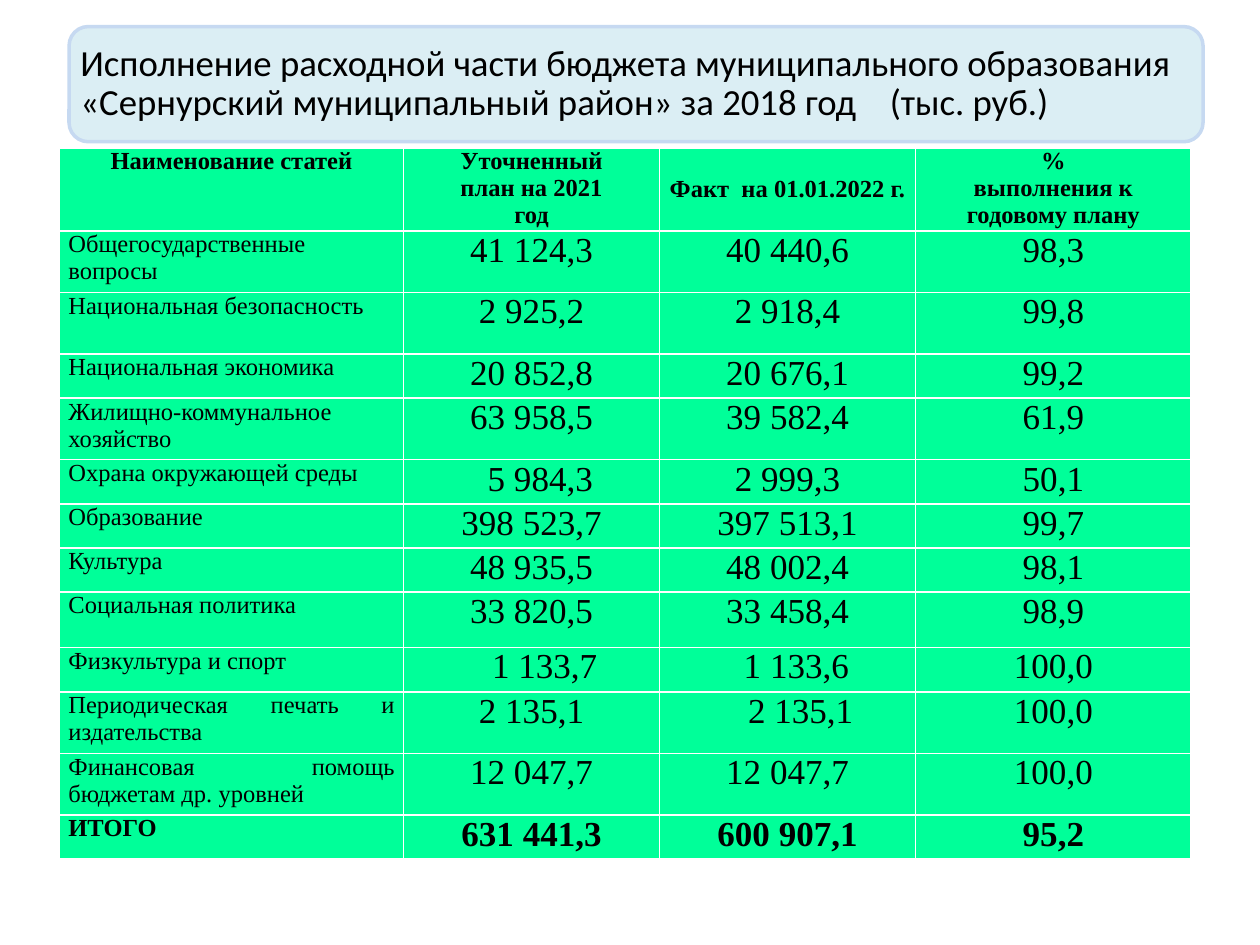
from lxml.etree import SubElement
from pptx import Presentation
from pptx.dml.color import RGBColor
from pptx.enum.shapes import MSO_SHAPE as Preset
from pptx.enum.text import MSO_ANCHOR as Anchor, PP_ALIGN as Align
from pptx.oxml.ns import qn
from pptx.util import Pt


def color(value):
    return RGBColor.from_string(value)


def add_run(paragraph, text, font, size, bold=False):
    run = paragraph.add_run()
    run.text = text
    run.font.name = font
    run.font.size = Pt(size)
    run.font.bold = bold
    run.font.color.rgb = color("000000")


presentation = Presentation()
presentation.slide_width = Pt(720)
presentation.slide_height = Pt(540)
slide = presentation.slides.add_slide(presentation.slide_layouts[6])

title = slide.shapes.add_shape(Preset.ROUNDED_RECTANGLE, Pt(39.5), Pt(15.2), Pt(648), Pt(65.8))
title.shadow.inherit = False
title.fill.solid()
title.fill.fore_color.rgb = color("DBEEF4")
title.line.color.rgb = color("C6D9F1")
title.line.width = Pt(2)
title_frame = title.text_frame
title_frame.word_wrap = True
title_frame.vertical_anchor = Anchor.MIDDLE
title_frame.margin_left = title_frame.margin_right = Pt(3.3)
paragraph = title_frame.paragraphs[0]
paragraph.alignment = Align.LEFT
paragraph.line_spacing = 0.9
tab_list = SubElement(paragraph._p.get_or_add_pPr(), qn("a:tabLst"))
SubElement(tab_list, qn("a:tab"), pos=str(Pt(462.5)), algn="l")
title_text = "Исполнение расходной части бюджета муниципального образования «Сернурский муниципальный район» за 2018 год"
add_run(paragraph, title_text, "Calibri", 21)
add_run(paragraph, "\t(тыс. руб.)", "Calibri", 21)

rows = [
    ("Наименование статей", "Уточненный\nплан на 2021\nгод", "Факт  на 01.01.2022 г.",
     "%\nвыполнения к\nгодовому плану"),
    ("Общегосударственные вопросы", "41 124,3", "40 440,6", "98,3"),
    ("Национальная безопасность", "2 925,2", "2 918,4", "99,8"),
    ("Национальная экономика", "20 852,8", "20 676,1", "99,2"),
    ("Жилищно-коммунальное хозяйство", "63 958,5", "39 582,4", "61,9"),
    ("Охрана окружающей среды", "5 984,3", "2 999,3", "50,1"),
    ("Образование", "398 523,7", "397 513,1", "99,7"),
    ("Культура", "48 935,5", "48 002,4", "98,1"),
    ("Социальная политика", "33 820,5", "33 458,4", "98,9"),
    ("Физкультура и спорт", "1 133,7", "1 133,6", "100,0"),
    ("Периодическая печать и издательства", "2 135,1", "2 135,1", "100,0"),
    ("Финансовая помощь бюджетам др. уровней", "12 047,7", "12 047,7", "100,0"),
    ("ИТОГО", "631 441,3", "600 907,1", "95,2"),
]
column_widths = [196.5, 146.3, 146.3, 157.5]
row_heights = [47.5, 35.2, 35.2, 25.2, 35.2, 25.2, 25.2, 25.2, 31.8, 25.2, 35.2, 35.2, 25.2]
indents = {(5, 1): 10, (9, 1): 15, (9, 2): 10, (10, 2): 15}
last_row = len(rows) - 1

table = slide.shapes.add_table(
    len(rows), len(column_widths), Pt(34.1), Pt(84.5), Pt(sum(column_widths)), Pt(sum(row_heights))
).table
table.horz_banding = False
for column, width in zip(table.columns, column_widths):
    column.width = Pt(width)

for row_index, (texts, height) in enumerate(zip(rows, row_heights)):
    table.rows[row_index].height = Pt(height)
    for column_index, text in enumerate(texts):
        cell = table.cell(row_index, column_index)
        cell.fill.solid()
        cell.fill.fore_color.rgb = color("00FF99")
        cell.margin_left = Pt(5 + indents.get((row_index, column_index), 0))
        cell.margin_right = Pt(5)
        cell.margin_top = cell.margin_bottom = 0
        cell.vertical_anchor = Anchor.MIDDLE if (row_index, column_index) == (0, 2) else Anchor.TOP
        if row_index == 0 or column_index > 0:
            alignment = Align.CENTER
        else:
            alignment = Align.LEFT if row_index < 5 else Align.JUSTIFY
        size = 14 if row_index == 0 or column_index == 0 else 20
        for line_index, line in enumerate(text.split("\n")):
            paragraph = cell.text_frame.add_paragraph() if line_index else cell.text_frame.paragraphs[0]
            paragraph.alignment = alignment
            add_run(paragraph, line, "Times New Roman", size, row_index in (0, last_row))

presentation.save("out.pptx")
